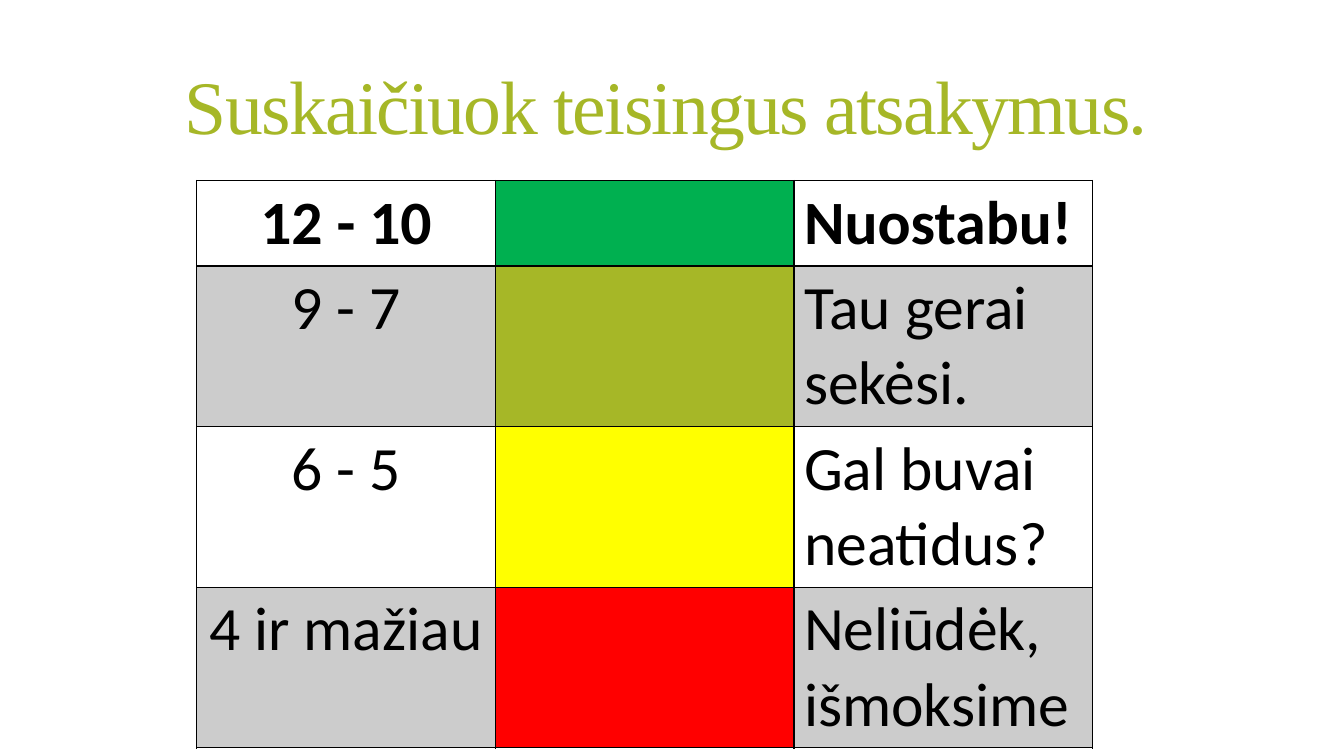
"""Build a slide with a colour-coded table for grading correct answers."""
from pptx import Presentation
from pptx.dml.color import RGBColor
from pptx.enum.text import MSO_ANCHOR as Anchor, MSO_AUTO_SIZE as AutoSize, PP_ALIGN as Align
from pptx.oxml.ns import qn
from pptx.util import Pt
from lxml.etree import SubElement

COLORS = {
    "title": "A6B727",
    "ink": "000000",
    "plain": "FFFFFF",
    "band": "CCCCCC",
    "great": "00B050",
    "good": "A6B727",
    "fair": "FFFF00",
    "poor": "FF0000",
}
TITLE = "Suskaičiuok teisingus atsakymus."
GRADES = [
    ("12 - 10", "great", "Nuostabu!"),
    ("9 - 7", "good", "Tau gerai sekėsi."),
    ("6 - 5", "fair", "Gal buvai neatidus?"),
    ("4 ir mažiau", "poor", "Neliūdėk, išmoksime"),
]
TITLE_BOX = (51.8, 39.6, 848.2, 80.6)
TABLE_LEFT, TABLE_TOP = 140.6, 128.9
COLUMN_WIDTH = 213.3
HEADER_HEIGHT, ROW_HEIGHT = 60.8, 114.6
THIN, THICK = 1, 2


def color(name):
    return RGBColor.from_string(COLORS[name])


def write(frame, text, *, font, size, ink, align, bold=False, line_spacing=None, tracking=None):
    para = frame.paragraphs[0]
    para.alignment = align
    if line_spacing:
        para.line_spacing = line_spacing
    span = para.add_run()
    span.text = text
    span.font.name = font
    span.font.size = Pt(size)
    span.font.bold = bold
    span.font.color.rgb = color(ink)
    if tracking:
        span.font._element.set("spc", str(round(tracking * 100)))


def set_borders(cell, top, bottom):
    properties = cell._tc.get_or_add_tcPr()
    for side, width in (("L", THIN), ("R", THIN), ("T", top), ("B", bottom)):
        line = SubElement(properties, qn(f"a:ln{side}"), w=str(Pt(width)))
        fill = SubElement(line, qn("a:solidFill"))
        SubElement(fill, qn("a:srgbClr"), val=COLORS["ink"])


def add_title(page):
    box = page.shapes.title
    box.left, box.top, box.width, box.height = map(Pt, TITLE_BOX)
    frame = box.text_frame
    frame.auto_size = AutoSize.NONE
    frame.word_wrap = True
    frame.vertical_anchor = Anchor.MIDDLE
    write(frame, TITLE, font="Times New Roman", size=54, ink="title",
          align=Align.CENTER, line_spacing=0.85, tracking=-1.2)


def add_grades(page):
    heights = [HEADER_HEIGHT] + [ROW_HEIGHT] * (len(GRADES) - 1)
    columns = len(GRADES[0])
    table = page.shapes.add_table(
        len(GRADES), columns, Pt(TABLE_LEFT), Pt(TABLE_TOP),
        Pt(COLUMN_WIDTH * columns), Pt(sum(heights))).table
    table.first_row = False
    table.horz_banding = False
    for column in table.columns:
        column.width = Pt(COLUMN_WIDTH)
    for index, (score, grade, comment) in enumerate(GRADES):
        table.rows[index].height = Pt(heights[index])
        background = "band" if index % 2 else "plain"
        top = THICK if index == 1 else THIN
        bottom = THICK if index == 0 else THIN
        cells = (
            (score, background, Align.CENTER),
            ("", grade, Align.LEFT),
            (comment, background, Align.LEFT),
        )
        for position, (text, fill, align) in enumerate(cells):
            cell = table.cell(index, position)
            set_borders(cell, top, bottom)
            cell.fill.solid()
            cell.fill.fore_color.rgb = color(fill)
            if text:
                write(cell.text_frame, text, font="Calibri", size=44, ink="ink",
                      align=align, bold=index == 0)


def main():
    deck = Presentation()
    deck.slide_width, deck.slide_height = Pt(960), Pt(540)
    page = deck.slides.add_slide(deck.slide_layouts[5])
    add_title(page)
    add_grades(page)
    deck.save("out.pptx")


if __name__ == "__main__":
    main()
